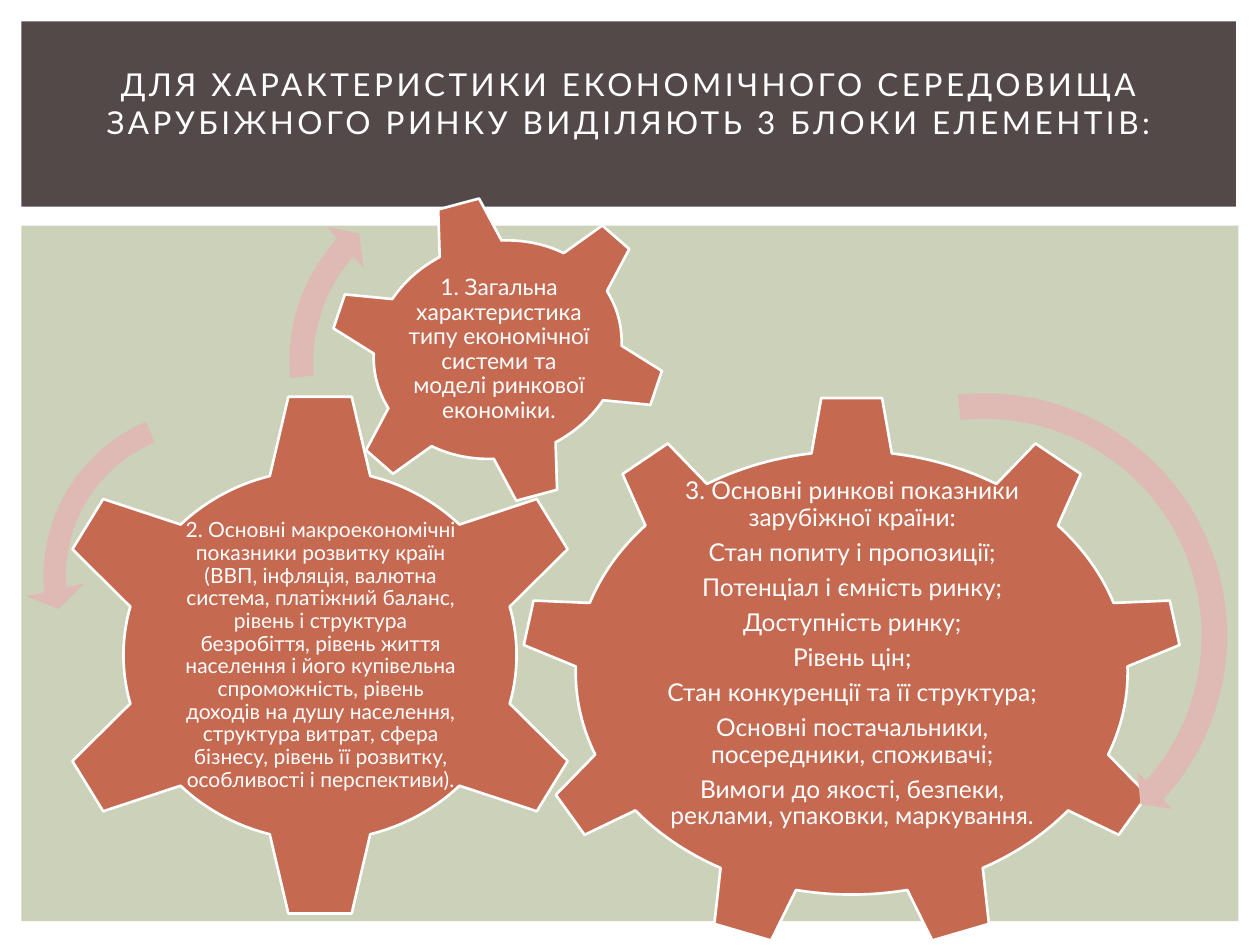
from dataclasses import dataclass

from pptx import Presentation
from pptx.dml.color import RGBColor
from pptx.enum.shapes import MSO_SHAPE as Shp
from pptx.enum.text import MSO_ANCHOR as Anchor, MSO_AUTO_SIZE as Fit, PP_ALIGN as Align
from pptx.util import Inches, Pt


@dataclass(frozen=True)
class Theme:
    font: str = "Lato"
    white: str = "FFFFFF"
    panel: str = "CCD1B9"
    band: str = "534949"
    gear: str = "C66951"
    arrow: str = "DFB9B3"
    title_size: float = 18
    outline: float = 1.5


@dataclass(frozen=True)
class Box:
    left: float
    top: float
    width: float
    height: float

    def emu(self) -> tuple:
        return tuple(Inches(v) for v in (self.left, self.top, self.width, self.height))


@dataclass(frozen=True)
class Gear:
    kind: Shp
    box: Box
    text_box: Box
    size: float
    lines: tuple[str, ...]
    rotation: float = 0


@dataclass(frozen=True)
class TurnArrow:
    kind: Shp
    box: Box
    adjustments: tuple[float, ...]


THEME = Theme()
PANEL = Box(0.17, 1.79, 9.66, 5.52)
BAND = Box(0.17, 0.17, 9.64, 1.47)
TITLE_BOX = Box(0.42, 0.39, 9.17, 1.15)
TITLE = (
    "ДЛЯ ХАРАКТЕРИСТИКИ ЕКОНОМІЧНОГО СЕРЕДОВИЩА "
    "ЗАРУБІЖНОГО РИНКУ ВИДІЛЯЮТЬ 3 БЛОКИ ЕЛЕМЕНТІВ:\v"
)

GEARS = (
    Gear(Shp.GEAR_9, Box(4.13, 3.14, 5.26, 4.4), Box(5.13, 4.17, 3.27, 2.26), 14, (
        "3. Основні ринкові показники зарубіжної країни:",
        "Стан попиту і пропозиції;",
        "Потенціал і ємність ринку;",
        "Доступність ринку;",
        "Рівень цін;",
        "Стан конкуренції та її структура;",
        "Основні постачальники, посередники, споживачі;",
        "Вимоги до якості, безпеки, реклами, упаковки, маркування.\v",
    )),
    Gear(Shp.GEAR_6, Box(0.35, 3.1, 4.38, 4.2), Box(1.44, 4.17, 2.21, 2.07), 12, (
        "2. Основні макроекономічні показники розвитку країн (ВВП, інфляція, "
        "валютна система, платіжний баланс, рівень і структура безробіття, "
        "рівень життя населення і його купівельна спроможність, рівень доходів "
        "на душу населення, структура витрат, сфера бізнесу, рівень її розвитку, "
        "особливості і перспективи).",
    )),
    Gear(Shp.GEAR_6, Box(2.59, 1.55, 2.72, 2.45), Box(3.21, 2.07, 1.5, 1.41), 13, (
        "1. Загальна характеристика типу економічної системи та моделі "
        "ринкової економіки.",
    ), rotation=345),
)

ARROWS = (
    TurnArrow(Shp.CIRCULAR_ARROW, Box(5.79, 3.02, 4.05, 4.05),
              (0.05, 2.99, 25.37, 158.18, 0.05)),
    TurnArrow(Shp.LEFT_CIRCULAR_ARROW, Box(0.2, 3.1, 2.94, 2.94),
              (0.06, 4.3, 104.89, 148.38, 0.08)),
    TurnArrow(Shp.CIRCULAR_ARROW, Box(2.17, 1.29, 3.17, 3.17),
              (0.06, 3.94, 133.14, 105.08, 0.07)),
)


def write_text(sp, lines: tuple[str, ...], *, size: float, inset: float = 0.1,
               line_spacing: float = 1.0, after: float = 0, tracking: float = 0) -> None:
    tf = sp.text_frame
    tf.word_wrap = True
    tf.auto_size = Fit.NONE
    tf.vertical_anchor = Anchor.MIDDLE
    tf.margin_left = tf.margin_right = Inches(inset)
    tf.margin_top = tf.margin_bottom = Inches(inset if inset < 0.05 else 0.05)
    for i, line in enumerate(lines):
        p = tf.add_paragraph() if i else tf.paragraphs[0]
        p.text = line
        p.alignment = Align.CENTER
        p.line_spacing = line_spacing
        p.space_before = Pt(0)
        p.space_after = Pt(after)
        p.font.size = Pt(size)
        for r in p.runs:
            r.font.name = THEME.font
            r.font.size = Pt(size)
            r.font.color.rgb = RGBColor.from_string(THEME.white)
            if tracking:
                r.font._element.set("spc", str(int(tracking * 100)))


def add_filled(s, kind: Shp, box: Box, fill: str, outline: str | None = None):
    sp = s.shapes.add_shape(kind, *box.emu())
    sp.shadow.inherit = False
    sp.fill.solid()
    sp.fill.fore_color.rgb = RGBColor.from_string(fill)
    if outline:
        sp.line.color.rgb = RGBColor.from_string(outline)
        sp.line.width = Pt(THEME.outline)
    else:
        sp.line.fill.background()
    return sp


def add_title(s) -> None:
    sp = s.shapes.title
    sp.left, sp.top, sp.width, sp.height = TITLE_BOX.emu()
    write_text(sp, (TITLE,), size=THEME.title_size, tracking=2)
    s.shapes._spTree.append(sp._element)


def add_gear(s, gear: Gear) -> None:
    sp = add_filled(s, gear.kind, gear.box, THEME.gear, THEME.white)
    sp.rotation = gear.rotation
    label = s.shapes.add_textbox(*gear.text_box.emu())
    write_text(label, gear.lines, size=gear.size, inset=0.02,
               line_spacing=0.9, after=round(gear.size * 0.35, 1))


def add_arrow(s, arrow: TurnArrow) -> None:
    sp = add_filled(s, arrow.kind, arrow.box, THEME.arrow)
    for i, value in enumerate(arrow.adjustments):
        sp.adjustments[i] = value


def main() -> None:
    prs = Presentation()
    prs.slide_width, prs.slide_height = Inches(10), Inches(7.5)
    s = prs.slides.add_slide(prs.slide_layouts[5])
    add_filled(s, Shp.RECTANGLE, PANEL, THEME.panel)
    add_filled(s, Shp.RECTANGLE, BAND, THEME.band)
    add_title(s)
    for gear in GEARS:
        add_gear(s, gear)
    for arrow in ARROWS:
        add_arrow(s, arrow)
    prs.save("out.pptx")


if __name__ == "__main__":
    main()
